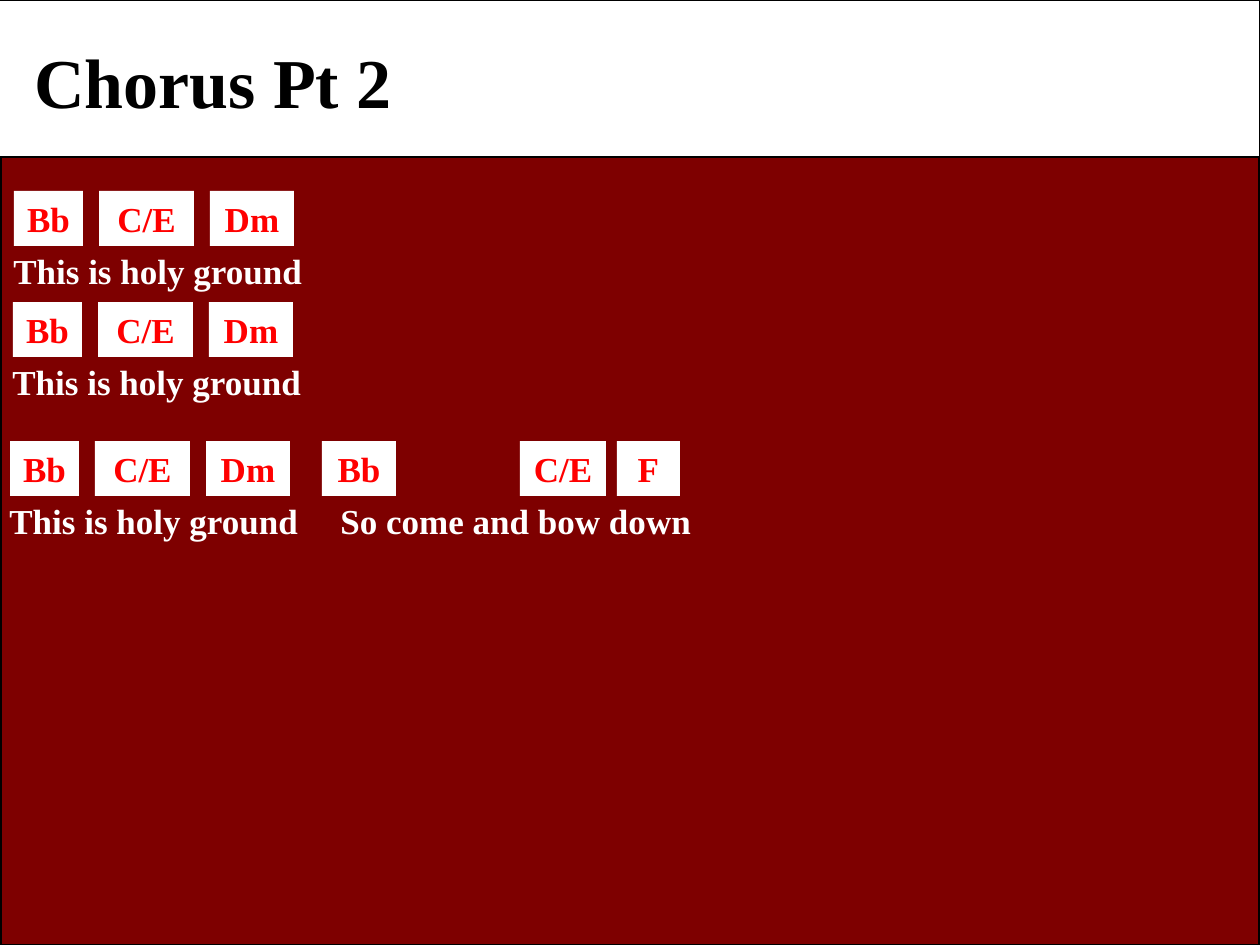
from lxml.etree import SubElement
from pptx import Presentation
from pptx.dml.color import RGBColor
from pptx.enum.shapes import MSO_SHAPE
from pptx.enum.text import MSO_ANCHOR, PP_ALIGN
from pptx.oxml.ns import qn
from pptx.util import Emu, Pt

EMU_PER_PX = 914400 / 126
MAROON = RGBColor(0x7E, 0x00, 0x00)
WHITE = RGBColor(0xFF, 0xFF, 0xFF)
BLACK = RGBColor(0x00, 0x00, 0x00)
RED = RGBColor(0xFF, 0x00, 0x00)
FONT = "Times New Roman"

BOX_HEIGHT = 55
LYRIC_DROP = 52  # from the top of the chords to the top of their lyric
SECOND_PHRASE = 331


def add_box(left, top, width, height, fill=None, line=None):
    """Add a rectangle without shadow; no fill or line unless given."""
    box = slide.shapes.add_shape(
        MSO_SHAPE.RECTANGLE,
        *(Emu(round(px * EMU_PER_PX)) for px in (left, top, width, height)))
    box.shadow.inherit = False
    if fill is None:
        box.fill.background()
    else:
        box.fill.solid()
        box.fill.fore_color.rgb = fill
    if line is None:
        box.line.fill.background()
    else:
        box.line.color.rgb = line
        box.line.width = Pt(0.75)
    return box


def write(box, text, size, color, align=PP_ALIGN.LEFT, wrap=True):
    box.text_frame.word_wrap = wrap
    box.text_frame.vertical_anchor = MSO_ANCHOR.TOP
    para = box.text_frame.paragraphs[0]
    para.alignment = align
    span = para.add_run()
    span.text = text
    span.font.name = FONT
    span.font.size = Pt(size)
    span.font.bold = True
    span.font.color.rgb = color
    return para


deck = Presentation()
deck.slide_width = Emu(round(1260 * EMU_PER_PX))
deck.slide_height = Emu(round(945 * EMU_PER_PX))
slide = deck.slides.add_slide(deck.slide_layouts[6])

# Background bands and title
add_box(1, 157, 1258, 788, MAROON, BLACK)
add_box(-1, 0, 1261, 157, WHITE, BLACK)
title = add_box(22, 32, 420, 97, WHITE)
write(title, "Chorus Pt 2", 40, BLACK)

# Each row: left shift, top, lyric phrases, further chords
# Each chord: name, left, width
HOLY_GROUND = "This is holy ground"
OPENING_CHORDS = [("Bb", 13, 69), ("C/E", 98, 95), ("Dm", 209, 84)]
BOW_DOWN_CHORDS = [("Bb", 325, 74), ("C/E", 523, 86), ("F", 620, 63)]
rows = [
    (1, 191, [HOLY_GROUND], []),
    (0, 302, [HOLY_GROUND], []),
    (-3, 441, [HOLY_GROUND, "So come and bow down"], BOW_DOWN_CHORDS),
]

for shift, top, phrases, further_chords in rows:
    lyric = add_box(shift, top + LYRIC_DROP, 1260, BOX_HEIGHT)
    para = write(lyric, "\t".join(phrases), 20, WHITE)
    if len(phrases) > 1:
        tabs = SubElement(para._p.get_or_add_pPr(), qn("a:tabLst"))
        SubElement(tabs, qn("a:tab"), algn="l",
                   pos=str(round(SECOND_PHRASE * EMU_PER_PX)))
    for name, left, width in OPENING_CHORDS + further_chords:
        chord = add_box(left + shift, top, width, BOX_HEIGHT, WHITE)
        write(chord, name, 20, RED, PP_ALIGN.CENTER, wrap=False)

deck.save("out.pptx")
